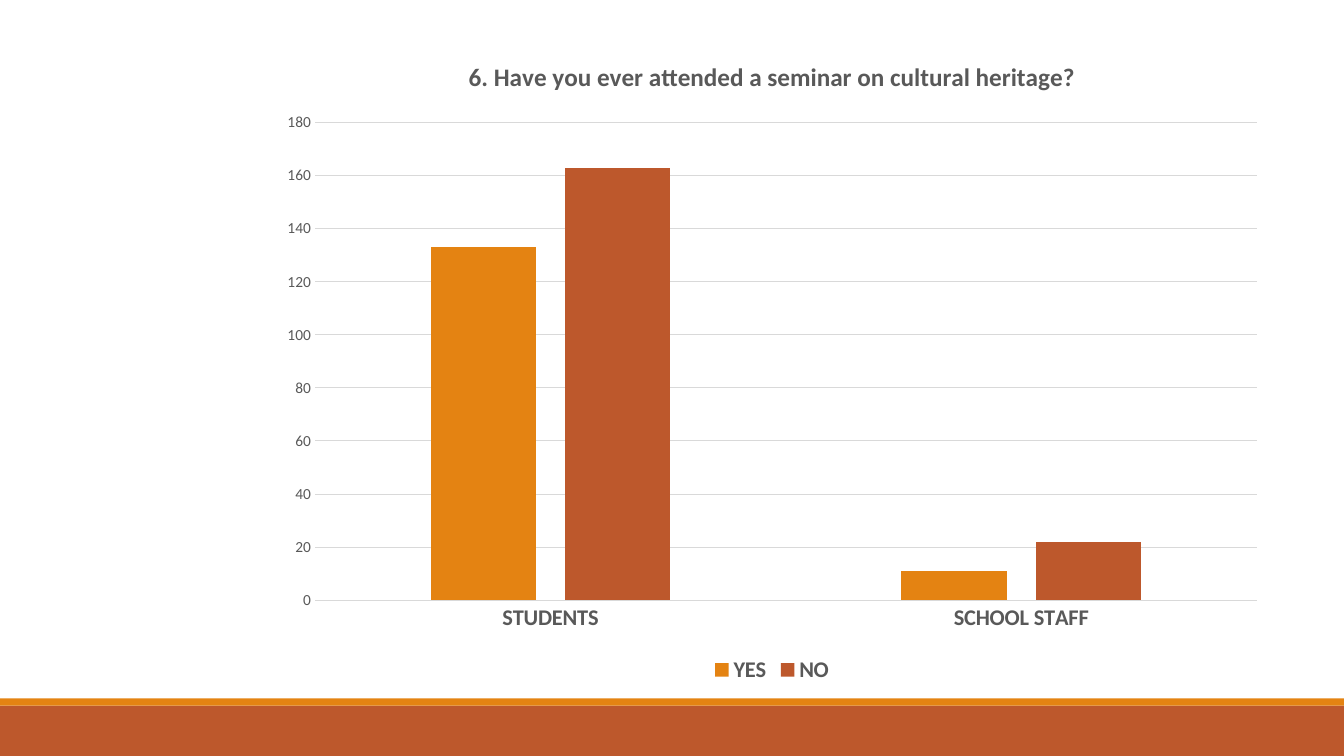
from dataclasses import dataclass

import pptx
import pptx.chart.data
import pptx.dml.color
import pptx.enum.chart
import pptx.enum.shapes
import pptx.util

Cm, Pt = pptx.util.Cm, pptx.util.Pt
SLIDE_W, SLIDE_H = 33.87, 19.05
BLANK_LAYOUT = 6


@dataclass(frozen=True)
class Theme:
    font: str = "Calibri"
    orange: str = "E48312"
    rust: str = "BD582C"
    text: str = "595959"
    grid: str = "D9D9D9"
    title_size: int = 18
    label_size: int = 16
    value_size: int = 11
    hairline: float = 0.75


class SlideBuilder:
    def __init__(self, prs, theme):
        self.theme = theme
        self.s = prs.slides.add_slide(prs.slide_layouts[BLANK_LAYOUT])

    def fill(self, fmt, color):
        fmt.fill.solid()
        fmt.fill.fore_color.rgb = pptx.dml.color.RGBColor.from_string(color)

    def line(self, fmt):
        fmt.line.color.rgb = pptx.dml.color.RGBColor.from_string(self.theme.grid)
        fmt.line.width = Pt(self.theme.hairline)

    def style_font(self, font, size, bold=False):
        font.name, font.size, font.bold = self.theme.font, Pt(size), bold
        font.color.rgb = pptx.dml.color.RGBColor.from_string(self.theme.text)

    def band(self, top, height, color):
        """Draw a full-width strip across the slide."""
        sp = self.s.shapes.add_shape(
            pptx.enum.shapes.MSO_SHAPE.RECTANGLE, 0, Cm(top), Cm(SLIDE_W), Cm(height))
        sp.shadow.inherit = False
        self.fill(sp, color)
        sp.line.fill.background()

    def column_chart(self, box, title, categories, series):
        """Draw clustered columns; series holds (name, values, color) rows."""
        data = pptx.chart.data.CategoryChartData()
        data.categories = categories
        for name, values, _ in series:
            data.add_series(name, values)
        chart = self.s.shapes.add_chart(
            pptx.enum.chart.XL_CHART_TYPE.COLUMN_CLUSTERED, *map(Cm, box), data).chart
        self.style_font(chart.font, self.theme.value_size)

        chart.has_title = True
        tf = chart.chart_title.text_frame
        tf.text = title
        self.style_font(tf.paragraphs[0].runs[0].font, self.theme.title_size, bold=True)
        chart.chart_title.include_in_layout = False

        chart.has_legend = True
        chart.legend.position = pptx.enum.chart.XL_LEGEND_POSITION.BOTTOM
        chart.legend.include_in_layout = False
        self.style_font(chart.legend.font, self.theme.label_size, bold=True)

        plot = chart.plots[0]
        plot.vary_by_categories = False
        plot.gap_width, plot.overlap = 219, -27
        for column, (_, _, color) in zip(plot.series, series):
            self.fill(column.format, color)
            column.invert_if_negative = False
        self.style_axes(chart)

    def style_axes(self, chart):
        for axis in (chart.category_axis, chart.value_axis):
            axis.major_tick_mark = pptx.enum.chart.XL_TICK_MARK.NONE
            axis.minor_tick_mark = pptx.enum.chart.XL_TICK_MARK.NONE
        self.style_font(chart.category_axis.tick_labels.font,
                        self.theme.label_size, bold=True)
        self.style_font(chart.value_axis.tick_labels.font, self.theme.value_size)
        self.line(chart.category_axis.format)
        chart.value_axis.format.line.fill.background()
        chart.value_axis.has_major_gridlines = True
        self.line(chart.value_axis.major_gridlines.format)


def main():
    prs = pptx.Presentation()
    prs.slide_width, prs.slide_height = Cm(SLIDE_W), Cm(SLIDE_H)
    theme = Theme()
    slide = SlideBuilder(prs, theme)
    slide.band(17.78, 1.27, theme.rust)
    slide.band(17.6, 0.18, theme.orange)
    slide.column_chart(
        (6.73, 0.91, 25.45, 16.43),
        "6. Have you ever attended a seminar on cultural heritage?",
        ["STUDENTS", "SCHOOL STAFF"],
        [("YES", (133, 11), theme.orange), ("NO", (163, 22), theme.rust)])
    prs.save("out.pptx")


if __name__ == "__main__":
    main()
